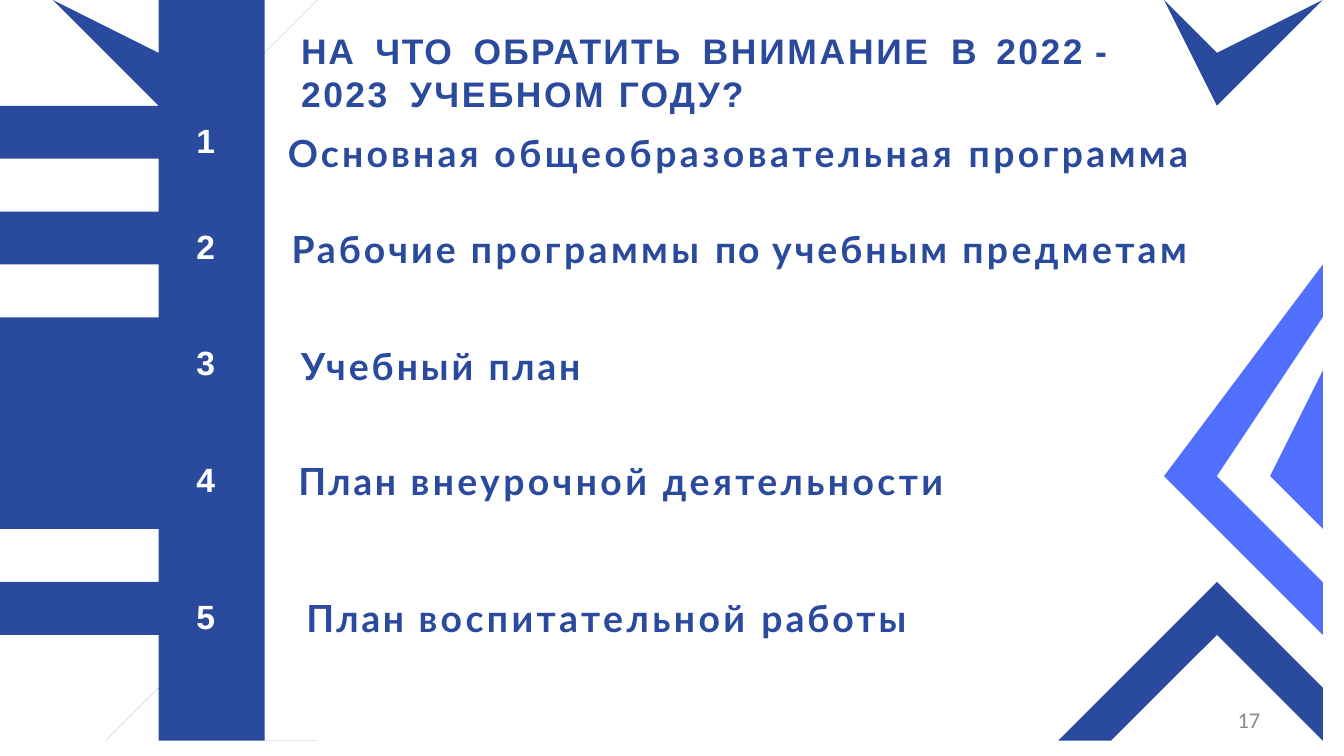
from dataclasses import dataclass
from typing import NamedTuple

import pptx
import pptx.dml.color
import pptx.enum.text
import pptx.util

Cm = pptx.util.Cm
Point = tuple[float, float]

WIDTH, HEIGHT = 25.4, 14.29
NAVY, BLUE, WHITE, GREY = "2A4A9D", "5270FF", "FFFFFF", "898989"
SPINE_LEFT, SPINE_RIGHT = 3.3, 4.55
BAR_HEIGHT = 1.31
# Right-hand bulge of a bar: x on the page, y below the top of the bar
BULGE = [(4.55, 0.19), (4.65, 0.26), (4.72, 0.31), (4.78, 0.37), (4.83, 0.44), (4.88, 0.56),
         (4.9, 0.66), (4.88, 0.77), (4.78, 0.92), (4.65, 1.07), (4.55, 1.14)]


class Span(NamedTuple):
    text: str
    spacing: float = 0


@dataclass
class Item:
    bar_top: float
    left: float
    top: float
    width: float
    spans: list[Span]


@dataclass
class Polygon:
    color: str
    points: list[Point]


ITEMS = [
    Item(2.04, 5.44, 2.44, 19.02, [Span("Основная ", 1.7), Span("общеобразовательная ", 1.9),
                                   Span("программа", 1.8)]),
    Item(4.04, 5.51, 4.24, 19.05, [Span("Рабочие ", 1.6), Span("программы ", 1.8),
                                   Span("по ", 0.9), Span("учебным ", 1.6),
                                   Span("предметам", 1.8)]),
    Item(6.23, 5.69, 6.45, 6.12, [Span("Учебный ", 1.6), Span("план", 1.4)]),
    Item(8.44, 5.64, 8.64, 13.72, [Span("План ", 1.4), Span("внеурочной деятельности", 1.8)]),
    Item(11.04, 5.79, 11.23, 12.78, [Span("План ", 1.4), Span("воспитательной ", 1.8),
                                     Span("работы", 1.6)]),
]

TITLE_WORDS = [
    Span("НА", 0.9), Span("ЧТО", 1), Span("ОБРАТИТЬ", 1.2), Span("ВНИМАНИЕ", 1.5),
    Span("В"), Span("2022", 1.4),
]
TITLE_GAP = Span(" ", 5.3)
TITLE_END = [Span("- "), Span("2023", 1.4), TITLE_GAP, Span("УЧЕБНОМ ", 1.4), Span("ГОДУ?", 1.2)]

DECORATIONS = [
    Polygon(NAVY, [(22.33, 0), (21.56, 0), (23.47, 1.91), (25.4, 0), (24.61, 0), (23.47, 1.14)]),
    Polygon(BLUE, [(25.4, 4.67), (21.51, 8.58), (25.4, 12.47)]),
    Polygon(WHITE, [(25.4, 6.07), (22.91, 8.56), (25.4, 11.07), (25.4, 10.34),
                    (23.62, 8.56), (25.4, 6.78)]),
    Polygon(NAVY, [(20.14, HEIGHT), (23.47, 10.95), (25.4, 12.85), (25.4, 13.61),
                   (23.47, 11.68), (20.88, HEIGHT)]),
]


def rgb(color: str) -> pptx.dml.color.RGBColor:
    return pptx.dml.color.RGBColor.from_string(color)


def spine_points() -> list[Point]:
    """Outline of the vertical spine with its bars, bulges and slanted branches."""
    points = [(6.5, 0), (6.07, 0), (SPINE_RIGHT, 0.91), (SPINE_RIGHT, 0), (SPINE_LEFT, 0),
              (SPINE_LEFT, 1.3), (1.4, 0.18), (1.4, 0.43), (SPINE_LEFT, 1.57)]
    for item in ITEMS:
        bottom = item.bar_top + BAR_HEIGHT
        points += [(SPINE_LEFT, item.bar_top), (0, item.bar_top),
                   (0, bottom), (SPINE_LEFT, bottom)]
    points += [(SPINE_LEFT, 13.11), (1.7, 13.97), (1.7, 14.15), (SPINE_LEFT, 13.31),
               (SPINE_LEFT, HEIGHT), (SPINE_RIGHT, HEIGHT), (SPINE_RIGHT, 13.74),
               (5.54, HEIGHT), (5.89, HEIGHT), (SPINE_RIGHT, 13.56)]
    for item in reversed(ITEMS):
        points += [(x, item.bar_top + y) for x, y in reversed(BULGE)]
    return points + [(SPINE_RIGHT, 1.17)]


def draw_polygon(page, polygon: Polygon) -> None:
    start, *others = polygon.points
    builder = page.shapes.build_freeform(*start, scale=Cm(1))
    builder.add_line_segments(others, close=True)
    shape = builder.convert_to_shape()
    shape.shadow.inherit = False
    shape.fill.solid()
    shape.fill.fore_color.rgb = rgb(polygon.color)
    shape.line.fill.background()


def write(box, spans: list[Span], *, size: float, font: str, color: str = NAVY,
          bold: bool = True, line_spacing: float = 1) -> None:
    frame = box.text_frame
    frame.word_wrap = True
    frame.auto_size = pptx.enum.text.MSO_AUTO_SIZE.NONE
    frame.vertical_anchor = pptx.enum.text.MSO_ANCHOR.TOP
    frame.margin_left = frame.margin_right = frame.margin_bottom = 0
    frame.margin_top = Cm(0.03)
    para = frame.paragraphs[0]
    para.alignment = pptx.enum.text.PP_ALIGN.LEFT
    para.line_spacing = line_spacing
    for text, spacing in spans:
        span = para.add_run()
        span.text = text
        span.font.size = pptx.util.Pt(size)
        span.font.name = font
        span.font.bold = bold
        span.font.color.rgb = rgb(color)
        span._r.get_or_add_rPr().set("spc", str(round(spacing * 100)))


def add_text(page, left: float, top: float, width: float, height: float,
             spans: list[Span], **text_format) -> None:
    box = page.shapes.add_textbox(Cm(left), Cm(top), Cm(width), Cm(height))
    write(box, spans, **text_format)


def add_title(page) -> None:
    title = page.shapes.title
    title.left, title.top, title.width, title.height = Cm(5.69), Cm(0.51), Cm(16.74), Cm(1.68)
    spans = [part for word in TITLE_WORDS for part in (word, TITLE_GAP)]
    spans[-1] = Span(" ")
    write(title, spans + TITLE_END, size=19, font="Arial", line_spacing=1.01)


def main() -> None:
    deck = pptx.Presentation()
    deck.slide_width, deck.slide_height = Cm(WIDTH), Cm(HEIGHT)
    page = deck.slides.add_slide(deck.slide_layouts[5])
    draw_polygon(page, Polygon(NAVY, spine_points()))
    add_title(page)
    for number, item in enumerate(ITEMS, start=1):
        add_text(page, item.left, item.top, item.width, 0.91, item.spans, size=20, font="Lato")
        add_text(page, 3.71, item.bar_top + 0.2, 0.43, 0.84, [Span(str(number))],
                 size=18, font="Arial", color=WHITE)
    for polygon in DECORATIONS:
        draw_polygon(page, polygon)
    add_text(page, 23.39, 13.31, 0.51, 0.58, [Span("17")],
             size=12, font="Calibri", color=GREY, bold=False)
    deck.save("out.pptx")


if __name__ == "__main__":
    main()
